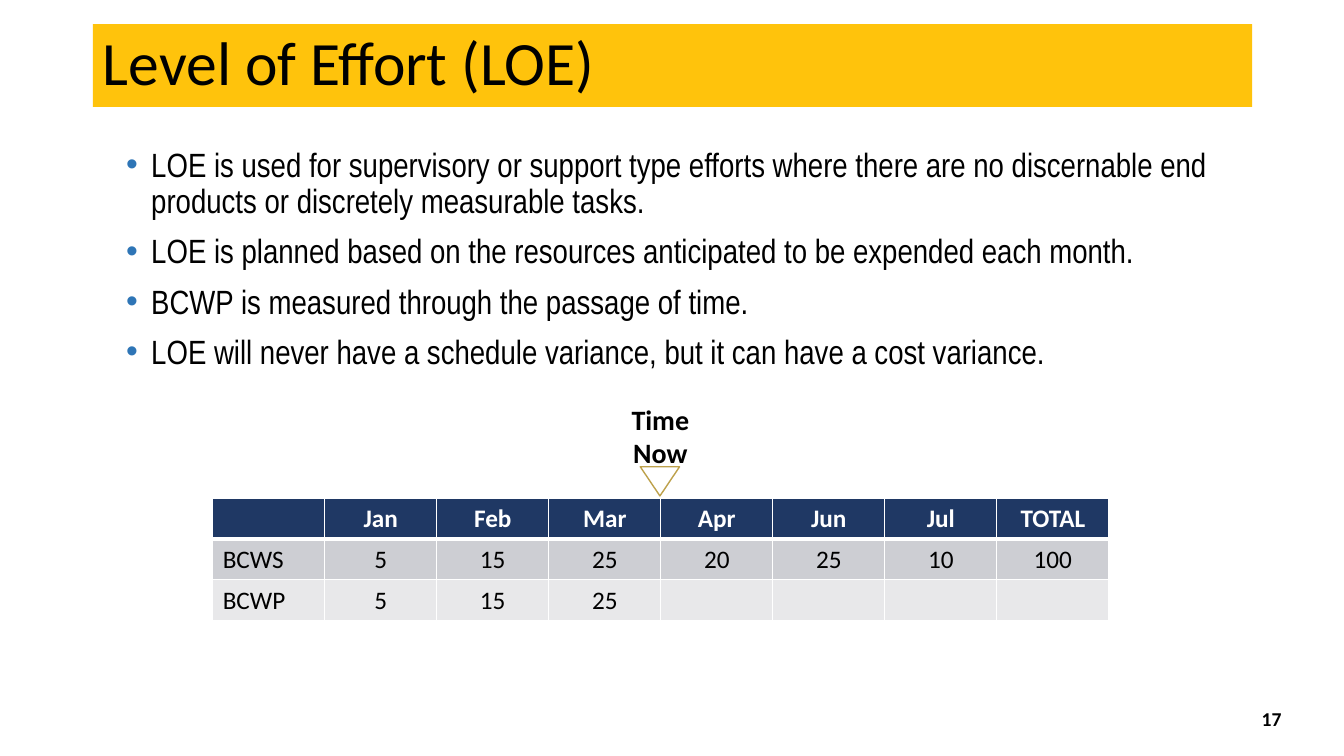
from lxml import etree
from pptx import Presentation
from pptx import util as u
from pptx.dml.color import RGBColor
from pptx.enum import shapes, text
from pptx.oxml.ns import qn

BLACK = RGBColor(0x00, 0x00, 0x00)
WHITE = RGBColor(0xFF, 0xFF, 0xFF)
YELLOW = RGBColor(0xFF, 0xC3, 0x0C)
NAVY = RGBColor(0x1F, 0x38, 0x64)
BLUE = RGBColor(0x2E, 0x75, 0xB6)
GOLD = RGBColor(0xBD, 0xA1, 0x4B)
GREY = RGBColor(0xCD, 0xCE, 0xD3)
PALE_GREY = RGBColor(0xE8, 0xE8, 0xEA)

POINTS = [
    "LOE is used for supervisory or support type efforts where there are no "
    "discernable end products or discretely measurable tasks.",
    "LOE is planned based on the resources anticipated to be expended each month.",
    "BCWP is measured through the passage of time.",
    "LOE will never have a schedule variance, but it can have a cost variance.",
]
SCHEDULE = [
    ["", "Jan", "Feb", "Mar", "Apr", "Jun", "Jul", "TOTAL"],
    ["BCWS", "5", "15", "25", "20", "25", "10", "100"],
    ["BCWP", "5", "15", "25", "", "", "", ""],
]
ROW_FILLS = [NAVY, GREY, PALE_GREY]


def set_all(target, values):
    """Set each named attribute of the target."""
    for name, value in values.items():
        setattr(target, name, value)


def place(shape, box):
    """Move and size a shape to a box given in inches."""
    names = ("left", "top", "width", "height")
    set_all(shape, dict(zip(names, map(u.Inches, box))))


def write(paragraph, words, size, color=BLACK, font="Calibri", bold=False, **layout):
    """Fill a paragraph with formatted words."""
    run = paragraph.add_run()
    run.text = words
    set_all(run.font, {"name": font, "size": u.Pt(size), "bold": bold})
    run.font.color.rgb = color
    set_all(paragraph, layout)


def add_title(slide, box):
    """Turn the title placeholder into the yellow heading band."""
    title = slide.shapes.title
    place(title, box)
    title.fill.solid()
    title.fill.fore_color.rgb = YELLOW
    set_all(title.text_frame, {"vertical_anchor": text.MSO_ANCHOR.MIDDLE,
                               "auto_size": text.MSO_AUTO_SIZE.NONE})
    write(title.text_frame.paragraphs[0], "Level of Effort (LOE)", 44,
          alignment=text.PP_ALIGN.LEFT, line_spacing=0.9)


def add_points(slide, box):
    """Write the bulleted list in the body placeholder."""
    body = slide.placeholders[1]
    place(body, box)
    frame = body.text_frame
    frame.auto_size = text.MSO_AUTO_SIZE.NONE
    for index, point in enumerate(POINTS):
        paragraph = frame.add_paragraph() if index else frame.paragraphs[0]
        write(paragraph, point, 24, font="Arial Narrow",
              line_spacing=0.9, space_before=u.Pt(10))
        properties = paragraph._p.get_or_add_pPr()
        properties.set("marL", str(u.Inches(0.25)))
        properties.set("indent", str(-u.Inches(0.25)))
        color = etree.SubElement(properties, qn("a:buClr"))
        etree.SubElement(color, qn("a:srgbClr"), val=str(BLUE))
        etree.SubElement(properties, qn("a:buFont"), typeface="Arial")
        etree.SubElement(properties, qn("a:buChar"), char="•")


def add_borders(cell, widths):
    """Draw white cell borders with the given widths in points."""
    properties = cell._tc.get_or_add_tcPr()
    for side, width in widths.items():
        line = etree.SubElement(properties, qn(f"a:ln{side}"), w=str(u.Pt(width)))
        fill = etree.SubElement(line, qn("a:solidFill"))
        etree.SubElement(fill, qn("a:srgbClr"), val=str(WHITE))


def add_schedule(slide, box):
    """Add the table of monthly budgeted costs."""
    lengths = map(u.Inches, box)
    table = slide.shapes.add_table(len(SCHEDULE), len(SCHEDULE[0]), *lengths).table
    for row, (values, fill) in enumerate(zip(SCHEDULE, ROW_FILLS)):
        header = row == 0
        for column, value in enumerate(values):
            cell = table.cell(row, column)
            add_borders(cell, {"L": 1, "R": 1, "T": 3 if row == 1 else 1,
                               "B": 3 if header else 1})
            cell.fill.solid()
            cell.fill.fore_color.rgb = fill
            cell.vertical_anchor = text.MSO_ANCHOR.MIDDLE
            if value:
                write(cell.text_frame.paragraphs[0], value, 18,
                      color=WHITE if header else BLACK, bold=header,
                      alignment=text.PP_ALIGN.CENTER if column else text.PP_ALIGN.LEFT)


def add_time_marker(slide, box):
    """Add the Time Now label with a triangle pointing down at its foot."""
    left, top, width, height = box
    triangle = slide.shapes.add_shape(
        shapes.MSO_SHAPE.ISOSCELES_TRIANGLE, u.Inches(left + width / 2 - 0.2),
        u.Inches(top + height - 0.29), u.Inches(0.39), u.Inches(0.29))
    triangle.rotation = 180
    triangle.shadow.inherit = False
    triangle.fill.background()
    triangle.line.color.rgb = GOLD
    triangle.line.width = u.Pt(1)
    label = slide.shapes.add_textbox(*map(u.Inches, (left, top, width, 0.77)))
    frame = label.text_frame
    for paragraph, word in ((frame.paragraphs[0], "Time"), (frame.add_paragraph(), "Now")):
        write(paragraph, word, 20, bold=True, alignment=text.PP_ALIGN.CENTER)


def add_page_number(slide, box):
    """Add the page number at the right of its box."""
    frame = slide.shapes.add_textbox(*map(u.Inches, box)).text_frame
    set_all(frame, {"word_wrap": True, "vertical_anchor": text.MSO_ANCHOR.MIDDLE})
    write(frame.paragraphs[0], "17", 14, bold=True, alignment=text.PP_ALIGN.RIGHT)


def main():
    """Build and save the presentation."""
    presentation = Presentation()
    presentation.slide_width = u.Inches(13.33)
    presentation.slide_height = u.Inches(7.5)
    slide = presentation.slides.add_slide(presentation.slide_layouts[1])
    add_title(slide, (0.92, 0.24, 11.5, 0.82))
    add_points(slide, (1.15, 1.42, 11.83, 2.41))
    add_schedule(slide, (2.11, 4.94, 8.89, 1.22))
    add_time_marker(slide, (6.16, 3.94, 0.78, 0.98))
    add_page_number(slide, (9.81, 6.93, 3, 0.4))
    presentation.save("out.pptx")


if __name__ == "__main__":
    main()
